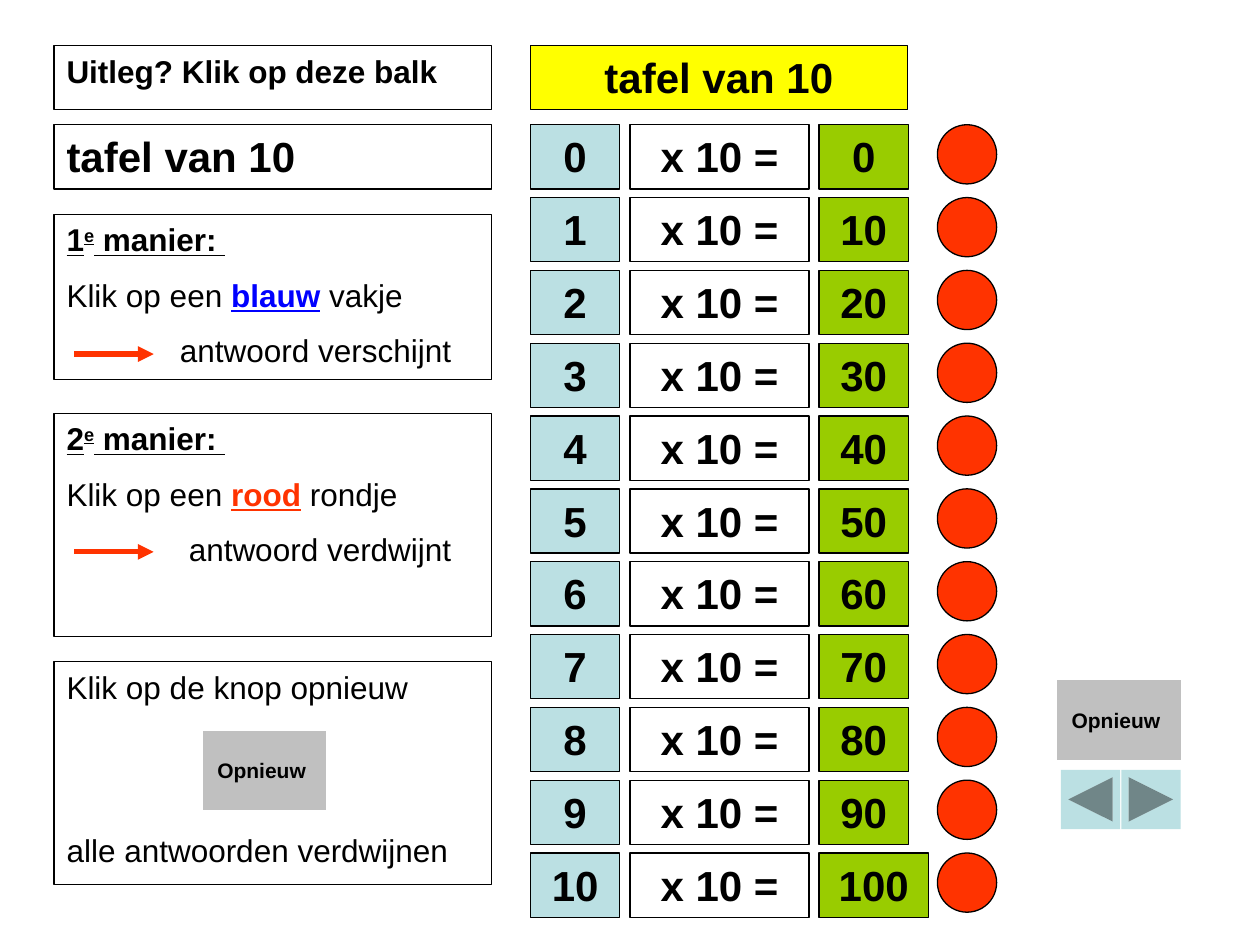
"""Builds the practice slide for the multiplication table of 10."""
from dataclasses import dataclass
from typing import Optional

from lxml.etree import SubElement
from pptx import Presentation
from pptx.dml.color import RGBColor
from pptx.enum.shapes import MSO_CONNECTOR, MSO_SHAPE
from pptx.enum.text import MSO_ANCHOR, PP_ALIGN
from pptx.oxml.ns import qn
from pptx.util import Inches, Pt


@dataclass(frozen=True)
class Theme:
    font: str = "Arial"
    black: str = "000000"
    white: str = "FFFFFF"
    green: str = "99CC00"
    pale_blue: str = "BBE0E3"
    yellow: str = "FFFF00"
    red: str = "FF3300"
    blue: str = "0000FF"
    grey: str = "C0C0C0"
    large: int = 24
    body: int = 18
    small: int = 12
    outline: float = 0.75
    arrow: float = 3
    paragraph_gap: float = 10
    button_gap: float = 71.5


THEME = Theme()


@dataclass(frozen=True)
class Span:
    text: str
    bold: bool = False
    underline: bool = False
    raised: bool = False
    color: str = THEME.black


@dataclass(frozen=True)
class Line:
    spans: tuple[Span, ...]
    size: int = THEME.body
    centered: bool = False
    indent: float = 0
    gap: float = 0


@dataclass(frozen=True)
class Box:
    left: float
    top: float
    width: float
    height: float
    fill: Optional[str] = None
    outlined: bool = True
    kind: MSO_SHAPE = MSO_SHAPE.RECTANGLE
    lines: tuple[Line, ...] = ()
    middle: bool = False
    wrap: bool = True


@dataclass(frozen=True)
class Method:
    number: str
    top: float
    height: float
    color_name: str
    color: str
    target: str
    outcome: str
    indent: float
    arrow_y: float


LEFT, PANEL_WIDTH = 0.43, 3.47
BAR_TOP, FIRST_ROW, LAST_ROW = 0.36, 0.99, 6.77
BLUE_LEFT, SUM_LEFT, ANSWER_LEFT, DOT_LEFT = 4.21, 5, 6.5, 7.44
CELL_WIDTH, SUM_WIDTH, WIDE_CELL, CELL_HEIGHT = 0.71, 1.42, 0.87, 0.51
DOT = 0.47
STEPS = 10

METHODS = (
    Method("1", 1.7, 1.31, "blauw", THEME.blue, " vakje", "antwoord verschijnt", 0.9, 2.81),
    Method("2", 3.28, 1.77, "rood", THEME.red, " rondje", "antwoord verdwijnt", 0.97, 4.38),
)


def write_line(paragraph, line: Line) -> None:
    """Fills a paragraph with the spans of one line."""
    paragraph.alignment = PP_ALIGN.CENTER if line.centered else PP_ALIGN.LEFT
    paragraph.space_before = Pt(line.gap)
    paragraph.font.name = THEME.font
    paragraph.font.size = Pt(line.size)
    if line.indent:
        properties = paragraph._p.get_or_add_pPr()
        properties.set("marL", str(Inches(line.indent)))
        properties.set("indent", "0")
    for span in line.spans:
        run = paragraph.add_run()
        run.text = span.text
        run.font.bold = span.bold
        run.font.underline = span.underline
        run.font.color.rgb = RGBColor.from_string(span.color)
        if span.raised:
            run._r.get_or_add_rPr().set("baseline", "30000")


def draw_box(slide, box: Box) -> None:
    """Draws a box with its fill, outline and text."""
    shape = slide.shapes.add_shape(
        box.kind, Inches(box.left), Inches(box.top), Inches(box.width), Inches(box.height))
    shape.shadow.inherit = False
    if box.fill:
        shape.fill.solid()
        shape.fill.fore_color.rgb = RGBColor.from_string(box.fill)
    else:
        shape.fill.background()
    if box.outlined:
        shape.line.color.rgb = RGBColor.from_string(THEME.black)
        shape.line.width = Pt(THEME.outline)
    else:
        shape.line.fill.background()
    frame = shape.text_frame
    frame.word_wrap = box.wrap
    frame.vertical_anchor = MSO_ANCHOR.MIDDLE if box.middle else MSO_ANCHOR.TOP
    for index, line in enumerate(box.lines):
        write_line(frame.add_paragraph() if index else frame.paragraphs[0], line)


def draw_cell(slide, left: float, top: float, width: float, text: str, fill: str) -> None:
    """Draws a filled cell with large centred text."""
    label = Line((Span(text, bold=True),), THEME.large, centered=True)
    draw_box(slide, Box(left, top, width, CELL_HEIGHT, fill, lines=(label,)))


def draw_panel(slide, top: float, height: float, *lines: Line) -> None:
    """Draws an unfilled explanation panel in the left column."""
    draw_box(slide, Box(LEFT, top, PANEL_WIDTH, height, lines=lines))


def draw_arrow(slide, y: float) -> None:
    """Draws a red arrow pointing at the outcome."""
    arrow = slide.shapes.add_connector(
        MSO_CONNECTOR.STRAIGHT, Inches(0.59), Inches(y), Inches(1.22), Inches(y))
    arrow.line.color.rgb = RGBColor.from_string(THEME.red)
    arrow.line.width = Pt(THEME.arrow)
    SubElement(arrow.line._get_or_add_ln(), qn("a:tailEnd"), type="triangle")
    SubElement(arrow._element.spPr, qn("a:effectLst"))


def draw_method(slide, method: Method) -> None:
    """Draws the panel that explains one way of practising."""
    gap = THEME.paragraph_gap
    heading = Line((Span(method.number, True, True), Span("e", True, True, True),
                    Span(" manier: ", True, True)))
    action = Line((Span("Klik op een "), Span(method.color_name, True, True, color=method.color),
                   Span(method.target)), gap=gap)
    outcome = Line((Span(method.outcome),), indent=method.indent, gap=gap)
    draw_panel(slide, method.top, method.height, heading, action, outcome)
    draw_arrow(slide, method.arrow_y)


def draw_reset(slide, left: float, top: float) -> None:
    """Draws a grey reset button."""
    label = Line((Span("Opnieuw ", bold=True),), THEME.small, centered=True)
    draw_box(slide, Box(left, top, 0.98, 0.63, THEME.grey, False,
                        MSO_SHAPE.ACTION_BUTTON_CUSTOM, (label,), middle=True, wrap=False))


def draw_row(slide, factor: int) -> None:
    """Draws one sum of the table with its red dot."""
    top = FIRST_ROW + factor * (LAST_ROW - FIRST_ROW) / STEPS
    answer_width = WIDE_CELL if factor == STEPS else CELL_WIDTH
    draw_cell(slide, ANSWER_LEFT, top, answer_width, str(factor * 10), THEME.green)
    draw_cell(slide, BLUE_LEFT, top, CELL_WIDTH, str(factor), THEME.pale_blue)
    draw_cell(slide, SUM_LEFT, top, SUM_WIDTH, "x 10 =", THEME.white)
    draw_box(slide, Box(DOT_LEFT, top, DOT, DOT, THEME.red, kind=MSO_SHAPE.OVAL))


def main() -> None:
    """Builds and saves the slide."""
    deck = Presentation()
    deck.slide_width, deck.slide_height = Inches(10), Inches(7.5)
    slide = deck.slides.add_slide(deck.slide_layouts[6])
    for factor in range(STEPS + 1):
        draw_row(slide, factor)
    draw_cell(slide, BLUE_LEFT, BAR_TOP, 2.99, "tafel van 10", THEME.yellow)
    draw_panel(slide, BAR_TOP, CELL_HEIGHT, Line((Span("Uitleg? Klik op deze balk", bold=True),)))
    draw_panel(slide, FIRST_ROW, CELL_HEIGHT,
               Line((Span("tafel van 10", bold=True),), THEME.large))
    for method in METHODS:
        draw_method(slide, method)
    draw_panel(slide, 5.25, 1.77, Line((Span("Klik op de knop opnieuw"),)),
               Line((Span("alle antwoorden verdwijnen"),), gap=THEME.button_gap))
    draw_reset(slide, 1.61, 5.8)
    draw_reset(slide, 8.39, 5.4)
    for left, kind in ((8.42, MSO_SHAPE.ACTION_BUTTON_BACK_OR_PREVIOUS),
                       (8.9, MSO_SHAPE.ACTION_BUTTON_FORWARD_OR_NEXT)):
        draw_box(slide, Box(left, 6.11, DOT, DOT, THEME.pale_blue, False, kind))
    deck.save("out.pptx")


if __name__ == "__main__":
    main()
